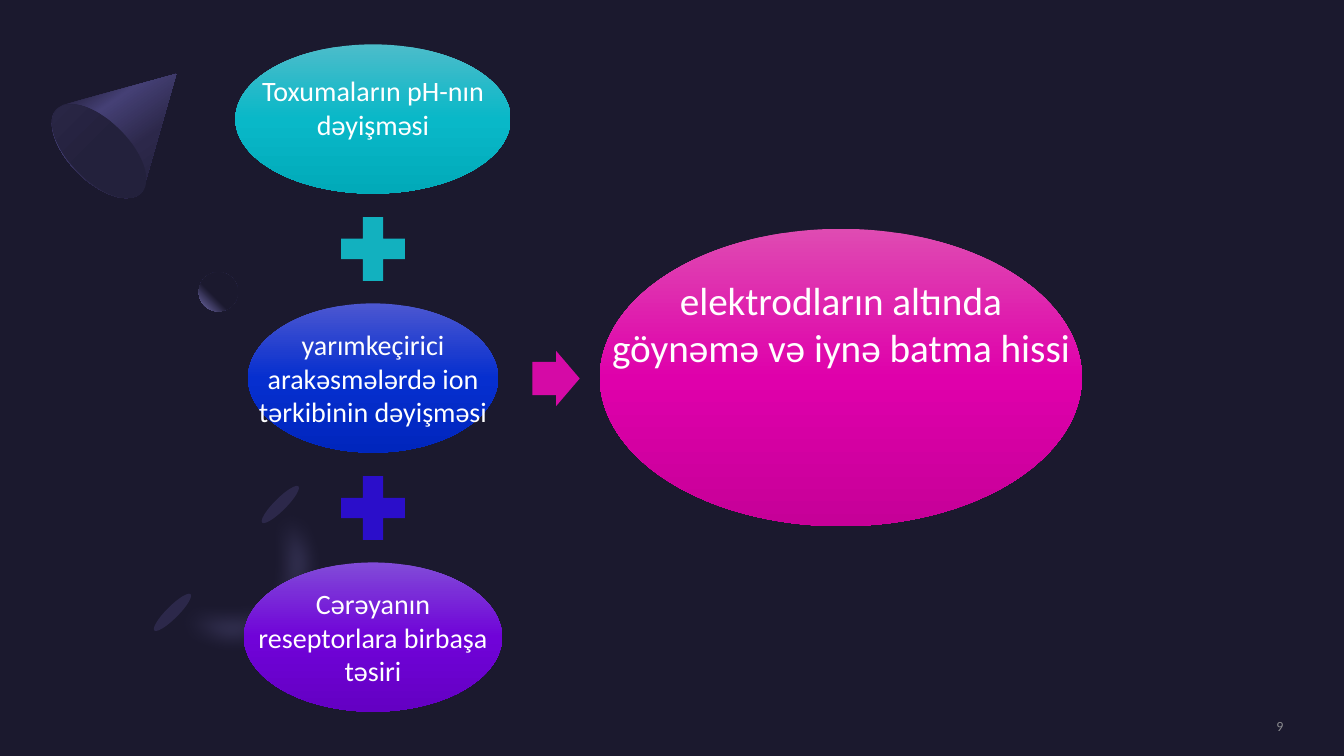
"""Build a slide on three causes that lead to one feeling under electrodes."""
import math
import pptx
import pptx.dml.color
import pptx.enum.shapes
import pptx.enum.text
import pptx.oxml
import pptx.oxml.ns
import pptx.util

Inches = pptx.util.Inches
Kind = pptx.enum.shapes.MSO_SHAPE
Align = pptx.enum.text.PP_ALIGN
qn = pptx.oxml.ns.qn
SPACE = 'xmlns:a="http://schemas.openxmlformats.org/drawingml/2006/main"'


def paint(item, *stops, angle=90):
    """Fill with one hex colour, or with (position, hex) stops."""
    if len(stops) == 1:
        item.fill.solid()
        item.fill.fore_color.rgb = pptx.dml.color.RGBColor.from_string(stops[0])
        return
    item.fill.gradient()
    item.fill.gradient_angle = 360 - angle
    ramp = item.element.spPr.find(qn("a:gradFill")).find(qn("a:gsLst"))
    for old in list(ramp):
        ramp.remove(old)
    for place, color in stops:
        ramp.append(pptx.oxml.parse_xml(
            f'<a:gs {SPACE} pos="{place * 1000}"><a:srgbClr val="{color}"/></a:gs>'))


def write(frame, words, size, color, align, inset=0, lift=0):
    """Put one run of text in the middle of a frame."""
    box = slide.shapes.add_textbox(*map(Inches, frame)).text_frame
    box.word_wrap = True
    box.vertical_anchor = pptx.enum.text.MSO_ANCHOR.MIDDLE
    box.margin_left = box.margin_right = box.margin_top = Inches(inset)
    box.margin_bottom = Inches(inset + lift)
    line = box.paragraphs[0]
    line.alignment = align
    run = line.add_run()
    run.text = words
    run.font.name = "Calibri"
    run.font.size = pptx.util.Pt(size)
    paint(run.font, color)


deck = pptx.Presentation()
deck.slide_width, deck.slide_height = Inches(13.33), Inches(7.5)
slide = deck.slides.add_slide(deck.slide_layouts[6])
paint(slide.background, "1B192E")

cone = [(1.75, 0.73), (1.43, 1.85), (1.43, 1.86),
        (1.42, 1.88, 1.41, 1.9, 1.4, 1.91), (1.28, 2.03, 1, 1.94, 0.77, 1.71),
        (0.54, 1.48, 0.45, 1.19, 0.56, 1.08), (0.58, 1.07, 0.59, 1.05, 0.61, 1.05),
        (0.62, 1.04)]
ring = [(2.96, 6.26), (3.36, 5.87, 3.36, 5.22, 2.96, 4.83), (2.61, 5.19),
        (2.8, 5.38, 2.8, 5.7, 2.61, 5.9), (2.41, 6.1, 2.09, 6.1, 1.89, 5.9),
        (1.53, 6.26), (1.93, 6.66, 2.57, 6.66, 2.96, 6.26)]
glow = [(2.98, 6.26), (3.37, 5.87, 3.31, 5.17, 2.85, 4.7), (2.49, 5.06),
        (2.72, 5.29, 2.75, 5.64, 2.55, 5.84), (2.36, 6.04, 2.01, 6.01, 1.77, 5.78),
        (1.41, 6.14), (1.88, 6.6, 2.58, 6.66, 2.98, 6.26)]
forms = []
for outline, turn, mid_x, mid_y in ((cone, 45, 1.26, 1.22), (ring, 315, 2.6, 5.9),
                                    (glow, 315, 2.56, 5.84)):
    cos, sin = math.cos(math.radians(turn)), math.sin(math.radians(turn))
    dots = []
    for part in outline:
        for x, y in zip(part[::2], part[1::2]):
            x, y = x - mid_x, y - mid_y
            dots.append((Inches(mid_x + x * cos + y * sin),
                         Inches(mid_y - x * sin + y * cos)))
    pen = slide.shapes.build_freeform(*dots[0], scale=1.0)
    pen.add_line_segments(dots[1:], close=True)
    form = pen.convert_to_shape()
    lines = iter(list(form.element.spPr.iter(qn("a:lnTo"))))
    for part in outline[1:]:
        first = next(lines)
        if len(part) == 6:
            curve = pptx.oxml.parse_xml(f"<a:cubicBezTo {SPACE}/>")
            first.addprevious(curve)
            for line in (first, next(lines), next(lines)):
                curve.append(line[0])
                line.getparent().remove(line)
    form.rotation = turn
    form.shadow.inherit = False
    form.line.fill.background()
    forms.append(form)

paint(forms[0], (30, "2C284A"), (40, "454075"), (60, "2C284A"), (100, "1B192E"), angle=10)
paint(forms[1], "1B192E")
paint(forms[2], "7771B2")
tint = forms[2].element.spPr.find(qn("a:solidFill"))[0]
tint.append(pptx.oxml.parse_xml(f'<a:alpha {SPACE} val="40000"/>'))
blur = forms[2].element.spPr.find(qn("a:effectLst"))
blur.append(pptx.oxml.parse_xml(f'<a:softEdge {SPACE} rad="{Inches(0.2)}"/>'))

pieces = [
    (Kind.OVAL, (0.69, 0.91, 0.59, 1.18), 135, [(50, "23213C"), (100, "2C284A")], None),
    (Kind.OVAL, (1.97, 2.7, 0.39, 0.39), 0, [(60, "1B192E"), (100, "7771B2")], None),
    (Kind.OVAL, (2.72, 4.75, 0.12, 0.51), 45, ["2C284A"], None),
    (Kind.OVAL, (1.65, 5.82, 0.12, 0.51), 45, ["2C284A"], None),
]
pitch, height, middle, plus = 2.57, 1.48, 3.7, 0.86
causes = [
    (2.73, "Toxumaların pH-nın dəyişməsi", 0.23, ("4CBCCA", "09B8C8", "01AAB9"), "12B1BF"),
    (2.48, "yarımkeçirici arakəsmələrdə ion tərkibinin dəyişməsi", 0,
     ("4C57D0", "062FCF", "0026BD"), "2B0ECA"),
    (2.56, "Cərəyanın reseptorlara birbaşa təsiri", 0, ("814BD8", "7003D8", "6400C3"), None),
]
for row, (width, words, lift, shades, cross) in enumerate(causes):
    top = 0.44 + row * pitch
    pieces.append((Kind.OVAL, (middle - width / 2, top, width, height), 0,
                   list(zip((0, 50, 100), shades)), (words, 20, 0.03, lift)))
    if cross:
        pieces.append((Kind.MATH_PLUS, (middle - plus / 2, top + 1.6, plus, plus), 0,
                       [cross], None))
pieces += [
    (Kind.RIGHT_ARROW, (5.28, 3.48, 0.47, 0.55), 0, ["D50AA6"], None),
    (Kind.OVAL, (5.95, 2.27, 4.78, 2.95), 0, [(0, "DF4BB2"), (50, "DF00AB"), (100, "C60098")],
     ("elektrodların altında göynəmə və iynə batma hissi", 28, 0.04, 1.08)),
]

shapes = []
for kind, frame, turn, stops, label in pieces:
    shape = slide.shapes.add_shape(kind, *map(Inches, frame))
    shape.shadow.inherit = False
    shape.line.fill.background()
    shape.rotation = turn
    paint(shape, *stops)
    if kind == Kind.RIGHT_ARROW:
        shape.adjustments[0] = 0.6
    if label:
        words, size, inset, lift = label
        write(frame, words, size, "FFFFFF", Align.CENTER, inset, lift)
    shapes.append(shape)

blend = shapes[1].element.spPr.find(qn("a:gradFill"))
blend.replace(blend.find(qn("a:lin")), pptx.oxml.parse_xml(
    f'<a:path {SPACE} path="circle"><a:fillToRect l="100000" b="100000"/></a:path>'))

write((10.88, 7.12, 1.85, 0.17), "9", 10, "8A8A8E", Align.RIGHT)

deck.save("out.pptx")
